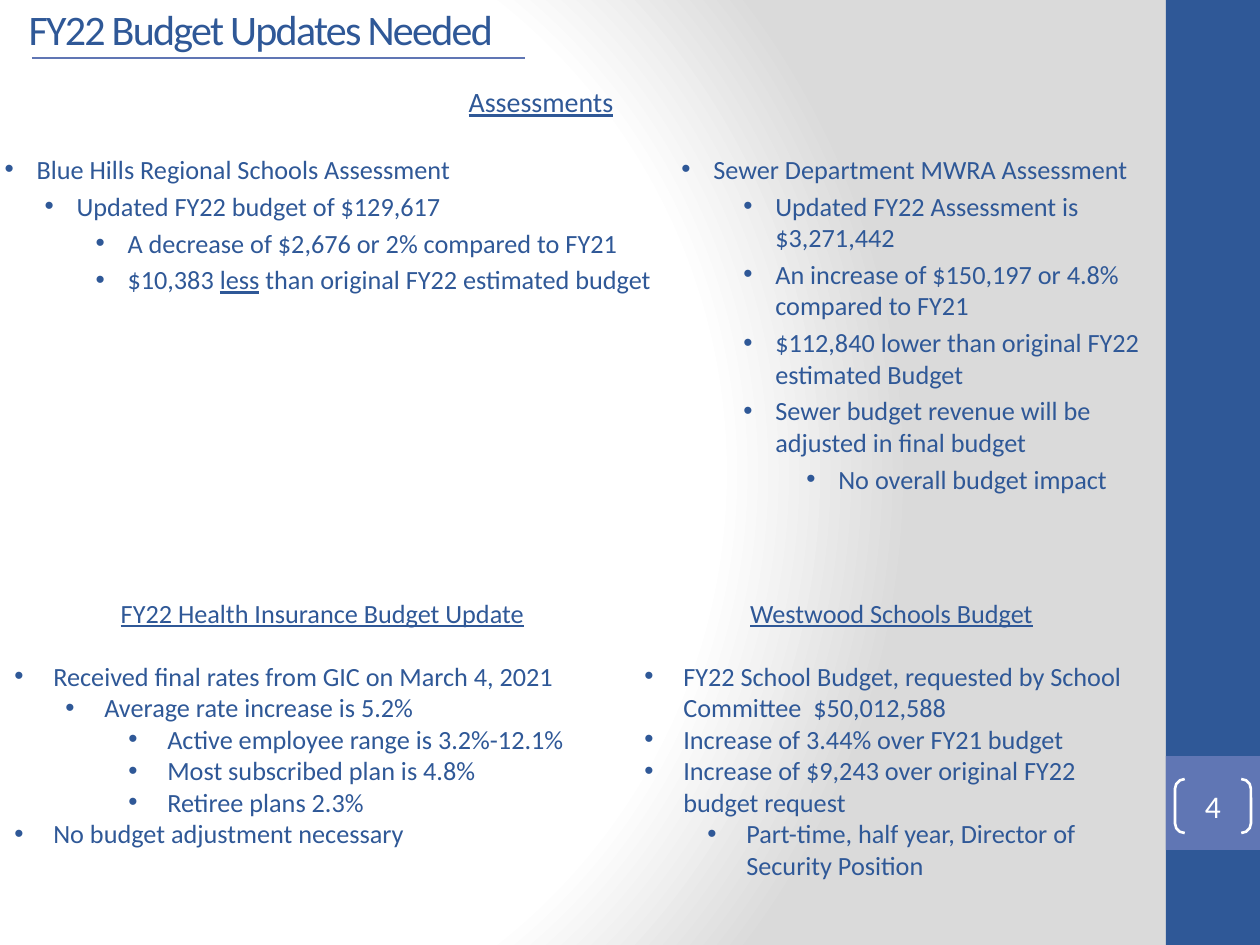
from pptx import Presentation
from pptx.dml.color import RGBColor
from pptx.enum.shapes import MSO_CONNECTOR, MSO_SHAPE
from pptx.enum.text import MSO_ANCHOR, MSO_AUTO_SIZE, PP_ALIGN
from pptx.oxml import parse_xml
from pptx.oxml.ns import nsdecls
from pptx.util import Pt
from lxml.etree import SubElement
from pptx.oxml.ns import qn

SCALE = 914400 / 126  # EMU in one px
COLORS = {"navy": "2F5897", "periwinkle": "6076B4", "white": "FFFFFF", "gray": "DADADA"}
FONT = "Calibri"
BODY_SIZE = 15

# Each bullet is its level followed by its runs; every second run is underlined.
BLUE_HILLS = [
    (0, "Blue Hills Regional Schools Assessment"),
    (1, "Updated FY22 budget of $129,617"),
    (2, "A decrease of $2,676 or 2% compared to FY21"),
    (2, "$10,383 ", "less", " than original FY22 estimated budget"),
]
SEWER = [
    (0, "Sewer Department MWRA Assessment"),
    (1, "Updated FY22 Assessment is $3,271,442"),
    (1, "An increase of $150,197 or 4.8% compared to FY21"),
    (1, "$112,840 lower than original FY22 estimated Budget"),
    (1, "Sewer budget revenue will be adjusted in final budget"),
    (2, "No overall budget impact"),
]
HEALTH = [
    (0, "Received final rates from GIC on March 4, 2021"),
    (1, "Average rate increase is 5.2%"),
    (2, "Active employee range is 3.2%-12.1%"),
    (2, "Most subscribed plan is 4.8%"),
    (2, "Retiree plans 2.3%"),
    (0, "No budget adjustment necessary"),
]
SCHOOLS = [
    (0, "FY22 School Budget, requested by School Committee  $50,012,588"),
    (0, "Increase of 3.44% over FY21 budget"),
    (0, "Increase of $9,243 over original FY22 budget request"),
    (1, "Part-time, half year, Director of Security Position"),
]


def px(length):
    return round(length * SCALE)


def emu(box):
    return [px(length) for length in box]


def color(name):
    return RGBColor.from_string(COLORS[name])


def place(shape, box):
    shape.left, shape.top, shape.width, shape.height = emu(box)


def add_run(paragraph, text, size, color_name="navy", underline=None):
    run = paragraph.add_run()
    run.text = text
    run.font.name = FONT
    run.font.size = Pt(size)
    run.font.underline = underline
    run.font.color.rgb = color(color_name)
    return run


def set_background(slide):
    """Circular gradient, white around the left and gray at the right."""
    stops = "".join(
        f'<a:gs pos="{position}"><a:srgbClr val="{COLORS[name]}"/></a:gs>'
        for position, name in ((0, "white"), (75000, "white"), (100000, "gray"))
    )
    slide.element.cSld.insert(0, parse_xml(
        f'<p:bg {nsdecls("p", "a")}><p:bgPr><a:gradFill rotWithShape="1">'
        f'<a:gsLst>{stops}</a:gsLst><a:path path="circle">'
        '<a:fillToRect l="20000" t="50000" r="100000" b="50000"/></a:path>'
        '</a:gradFill><a:effectLst/></p:bgPr></p:bg>'
    ))


def set_indent(paragraph, margin, hanging):
    properties = paragraph._p.get_or_add_pPr()
    properties.set("marL", str(px(margin)))
    properties.set("indent", str(-px(hanging)))
    return properties


def add_bullets(text_frame, bullets, margins, hanging, gap=0):
    """Add bullets to the frame, indented by the margin of their level."""
    for level, *texts in bullets:
        first = not text_frame.text
        paragraph = text_frame.paragraphs[0] if first else text_frame.add_paragraph()
        properties = set_indent(paragraph, margins[level], hanging)
        SubElement(properties, qn("a:buFont")).set("typeface", "Arial")
        SubElement(properties, qn("a:buChar")).set("char", "•")
        paragraph.level = level
        paragraph.alignment = PP_ALIGN.LEFT
        paragraph.space_before = Pt(0 if first else gap)
        for index, text in enumerate(texts):
            add_run(paragraph, text, BODY_SIZE, underline=index % 2 == 1)


def add_text_frame(slide, box):
    text_frame = slide.shapes.add_textbox(*emu(box)).text_frame
    text_frame.word_wrap = True
    return text_frame


def add_heading(text_frame, text, size=BODY_SIZE, margin=0, gap=0):
    paragraph = text_frame.paragraphs[0]
    paragraph.alignment = PP_ALIGN.CENTER
    paragraph.space_after = Pt(gap)
    set_indent(paragraph, margin, 0)
    add_run(paragraph, text, size, underline=True)


def add_rectangle(slide, box, color_name):
    rectangle = slide.shapes.add_shape(MSO_SHAPE.RECTANGLE, *emu(box))
    rectangle.shadow.inherit = False
    rectangle.fill.solid()
    rectangle.fill.fore_color.rgb = color(color_name)
    rectangle.line.fill.background()


def add_sidebar(slide, box, number):
    left, top, width, height = box
    add_rectangle(slide, box, "navy")
    tile_top = top + height * 4 // 5
    add_rectangle(slide, (left, tile_top, width, width), "periwinkle")

    bracket = slide.shapes.add_shape(
        MSO_SHAPE.DOUBLE_BRACKET, *emu((left + 9, tile_top + 23, width - 18, 54)))
    bracket.adjustments[0] = 0.18
    bracket.shadow.inherit = False
    bracket.fill.background()
    bracket.line.color.rgb = color("white")
    bracket.line.width = Pt(1.5)
    text_frame = bracket.text_frame
    text_frame.margin_left = text_frame.margin_right = 0
    text_frame.margin_top = text_frame.margin_bottom = 0
    text_frame.vertical_anchor = MSO_ANCHOR.MIDDLE
    paragraph = text_frame.paragraphs[0]
    paragraph.alignment = PP_ALIGN.CENTER
    add_run(paragraph, number, 18, "white")


def add_title(slide, box, text):
    left, top, _, _ = box
    title = slide.shapes.title
    place(title, box)
    title.text_frame.auto_size = MSO_AUTO_SIZE.NONE
    title.text_frame.vertical_anchor = MSO_ANCHOR.MIDDLE
    paragraph = title.text_frame.paragraphs[0]
    paragraph.alignment = PP_ALIGN.LEFT
    run = add_run(paragraph, text, 24)
    run.font._element.set("spc", "-100")

    rule_y = px(top + 73)
    rule = slide.shapes.add_connector(
        MSO_CONNECTOR.STRAIGHT, px(left + 16), rule_y, px(left + 509), rule_y)
    rule.line.color.rgb = color("periwinkle")
    rule.line.width = Pt(1)
    SubElement(rule._element.spPr, qn("a:effectLst"))


def add_assessments(slide, box):
    """Heading over the school list in the body placeholder and the sewer list."""
    left, top, width, _ = box
    add_heading(add_text_frame(slide, (left, top, width, 47)), "Assessments", 16)
    body = slide.placeholders[1]
    place(body, (left - 14, top + 69, 696, 242))
    body.text_frame.auto_size = MSO_AUTO_SIZE.NONE
    add_bullets(body.text_frame, BLUE_HILLS, (48, 88, 139), 32, gap=3)
    sewer = add_text_frame(slide, (left + 663, top + 69, 530, 363))
    add_bullets(sewer, SEWER, (48, 110, 173), 32, gap=3)


def add_budget_list(slide, box, heading, bullets, margins, heading_margin=0):
    text_frame = add_text_frame(slide, box)
    add_heading(text_frame, heading, margin=heading_margin, gap=18)
    add_bullets(text_frame, bullets, margins, 39)


def main():
    presentation = Presentation()
    presentation.slide_width, presentation.slide_height = px(1260), px(945)
    slide = presentation.slides.add_slide(presentation.slide_layouts[1])
    set_background(slide)
    add_sidebar(slide, (1166, 0, 94, 945), "4")
    add_title(slide, (16, -15, 1050, 88), "FY22 Budget Updates Needed")
    add_assessments(slide, (-10, 78, 1102, 432))
    add_budget_list(slide, (-10, 591, 630, 267), "FY22 Health Insurance Budget Update",
                    HEALTH, (51, 102, 165), heading_margin=35)
    add_budget_list(slide, (632, 591, 519, 299), "Westwood Schools Budget",
                    SCHOOLS, (39, 102))
    presentation.save("out.pptx")


if __name__ == "__main__":
    main()
